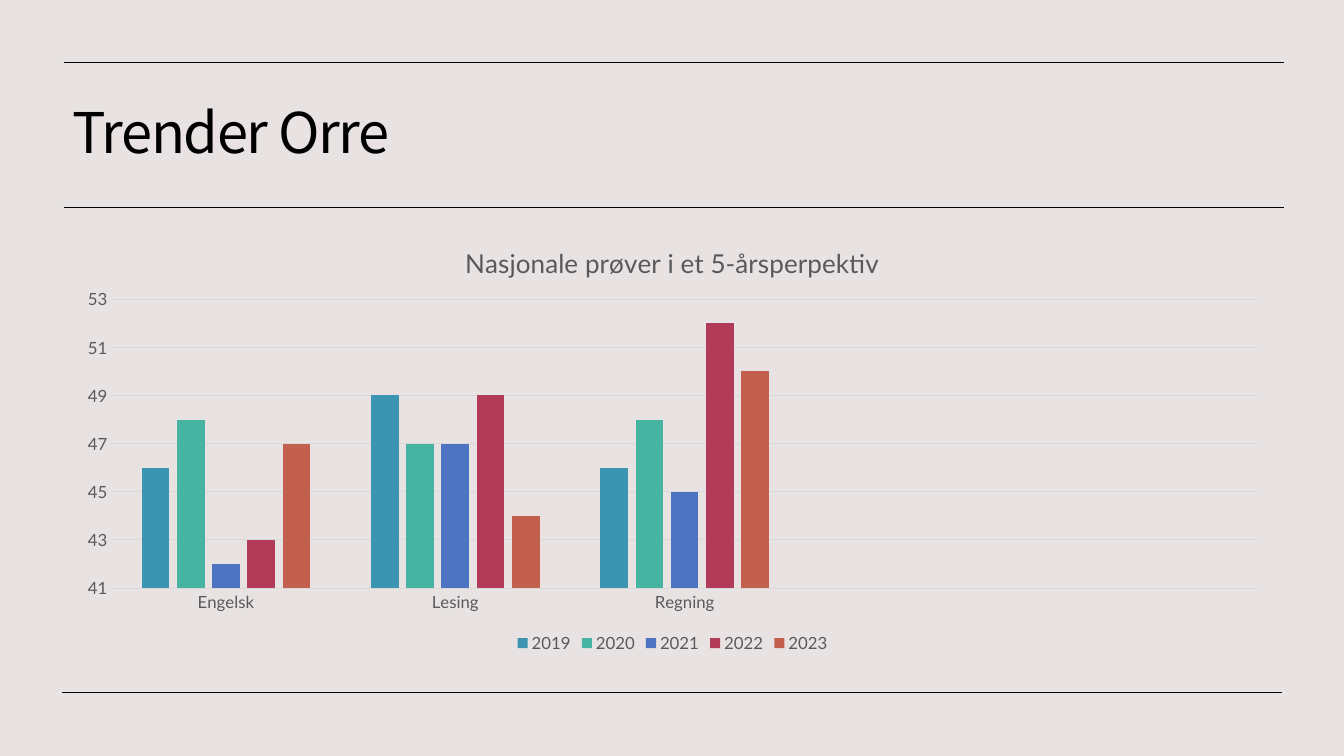
"""Build a slide with a clustered column chart of national test results."""
import pptx
import pptx.chart.data
import pptx.dml.color
import pptx.enum.chart
import pptx.enum.shapes
import pptx.enum.text
import pptx.oxml
import pptx.oxml.ns
import pptx.util

Inches = pptx.util.Inches
Pt = pptx.util.Pt
RGBColor = pptx.dml.color.RGBColor

BACKGROUND = RGBColor(0xE8, 0xE3, 0xE2)
BLACK = RGBColor(0x00, 0x00, 0x00)
GREY = RGBColor(0x59, 0x59, 0x59)
GRID = RGBColor(0xD9, 0xD9, 0xD9)
TITLE_FONT = "Noto Sans CJK KR"
CHART_FONT = "Lato"

SUBJECTS = ["Engelsk", "Lesing", "Regning", "", ""]
RESULTS = [
    ("2019", [46, 49, 46, None, None], RGBColor(0x3B, 0x94, 0xB1)),
    ("2020", [48, 47, 48, None, None], RGBColor(0x46, 0xB4, 0xA1)),
    ("2021", [42, 47, 45, None, None], RGBColor(0x4D, 0x74, 0xC3)),
    ("2022", [43, 49, 52, None, None], RGBColor(0xB1, 0x3B, 0x58)),
    ("2023", [47, 44, 50, None, None], RGBColor(0xC3, 0x60, 0x4D)),
]
PLOT_LAYOUT = {"x": 0.04, "y": 0.17, "w": 0.94, "h": 0.67}


def add_rule(slide, left, top):
    """Draw a thin horizontal line across the slide."""
    rule = slide.shapes.add_connector(
        pptx.enum.shapes.MSO_CONNECTOR.STRAIGHT,
        Inches(left), Inches(top), Inches(left + 12.1), Inches(top))
    rule.line.color.rgb = BLACK
    rule.line.width = Pt(0.5)
    rule._element.spPr.append(pptx.oxml.parse_xml(
        f"<a:effectLst {pptx.oxml.ns.nsdecls('a')}/>"))


def set_title(slide, text):
    """Place and format the title placeholder."""
    title = slide.shapes.title
    title.left, title.top = Inches(0.62), Inches(0.75)
    title.width, title.height = Inches(12.08), Inches(1.19)
    frame = title.text_frame
    frame.text = text
    frame.word_wrap = True
    frame.vertical_anchor = pptx.enum.text.MSO_ANCHOR.MIDDLE
    para = frame.paragraphs[0]
    para.alignment = pptx.enum.text.PP_ALIGN.LEFT
    para.line_spacing = 0.9
    style_font(para.font, 40, BLACK, TITLE_FONT)
    para.runs[0]._r.get_or_add_rPr().set("spc", "-100")


def style_font(font, size, color=GREY, name=CHART_FONT):
    """Set the size, colour and typeface of a font."""
    font.size = Pt(size)
    font.color.rgb = color
    font.name = name
    font.bold = False


def style_line(line):
    """Give a chart line the pale grid style."""
    line.color.rgb = GRID
    line.width = Pt(0.75)


def style_axes(chart):
    """Format both axes and the gridlines."""
    for axis in (chart.category_axis, chart.value_axis):
        axis.major_tick_mark = pptx.enum.chart.XL_TICK_MARK.NONE
        axis.minor_tick_mark = pptx.enum.chart.XL_TICK_MARK.NONE
        style_font(axis.tick_labels.font, 12)
    style_line(chart.category_axis.format.line)
    values = chart.value_axis
    values.minimum_scale, values.maximum_scale = 41, 53
    values.major_unit = 2
    values.format.line.fill.background()
    style_line(values.major_gridlines.format.line)


def place_plot(chart):
    """Fix the inner plot area as fractions of the chart."""
    plot_area = chart._chartSpace.chart.plotArea
    for layout in plot_area.findall(pptx.oxml.ns.qn("c:layout")):
        plot_area.remove(layout)
    modes = "".join(f'<c:{side}Mode val="edge"/>' for side in "xy")
    sizes = "".join(f'<c:{key} val="{value}"/>' for key, value in PLOT_LAYOUT.items())
    plot_area.insert(0, pptx.oxml.parse_xml(
        f"<c:layout {pptx.oxml.ns.nsdecls('c')}><c:manualLayout>"
        f'<c:layoutTarget val="inner"/>{modes}{sizes}'
        "</c:manualLayout></c:layout>"))


def add_results_chart(slide):
    """Add the column chart with its title and legend."""
    data = pptx.chart.data.CategoryChartData()
    data.categories = SUBJECTS
    for year, values, _ in RESULTS:
        data.add_series(year, values)
    chart = slide.shapes.add_chart(
        pptx.enum.chart.XL_CHART_TYPE.COLUMN_CLUSTERED,
        Inches(0.62), Inches(2.24), Inches(12.1), Inches(4.28), data).chart
    style_font(chart.font, 10, BLACK)
    chart.has_title = True
    chart.chart_title.include_in_layout = False
    frame = chart.chart_title.text_frame
    frame.text = "Nasjonale prøver i et 5-årsperpektiv"
    style_font(frame.paragraphs[0].font, 18.6)
    chart.has_legend = True
    chart.legend.position = pptx.enum.chart.XL_LEGEND_POSITION.BOTTOM
    chart.legend.include_in_layout = False
    style_font(chart.legend.font, 12)
    plot = chart.plots[0]
    plot.gap_width, plot.overlap = 219, -27
    plot.vary_by_categories = False
    for series, (_, _, color) in zip(plot.series, RESULTS):
        series.format.fill.solid()
        series.format.fill.fore_color.rgb = color
        series.invert_if_negative = False
    style_axes(chart)
    place_plot(chart)


def main():
    """Create and save the deck."""
    deck = pptx.Presentation()
    deck.slide_width, deck.slide_height = Inches(13.33), Inches(7.5)
    slide = deck.slides.add_slide(deck.slide_layouts.get_by_name("Title Only"))
    slide.background.fill.solid()
    slide.background.fill.fore_color.rgb = BACKGROUND
    for left, top in ((0.62, 6.87), (0.63, 2.06), (0.63, 0.62)):
        add_rule(slide, left, top)
    set_title(slide, "Trender Orre")
    add_results_chart(slide)
    deck.save("out.pptx")


if __name__ == "__main__":
    main()
